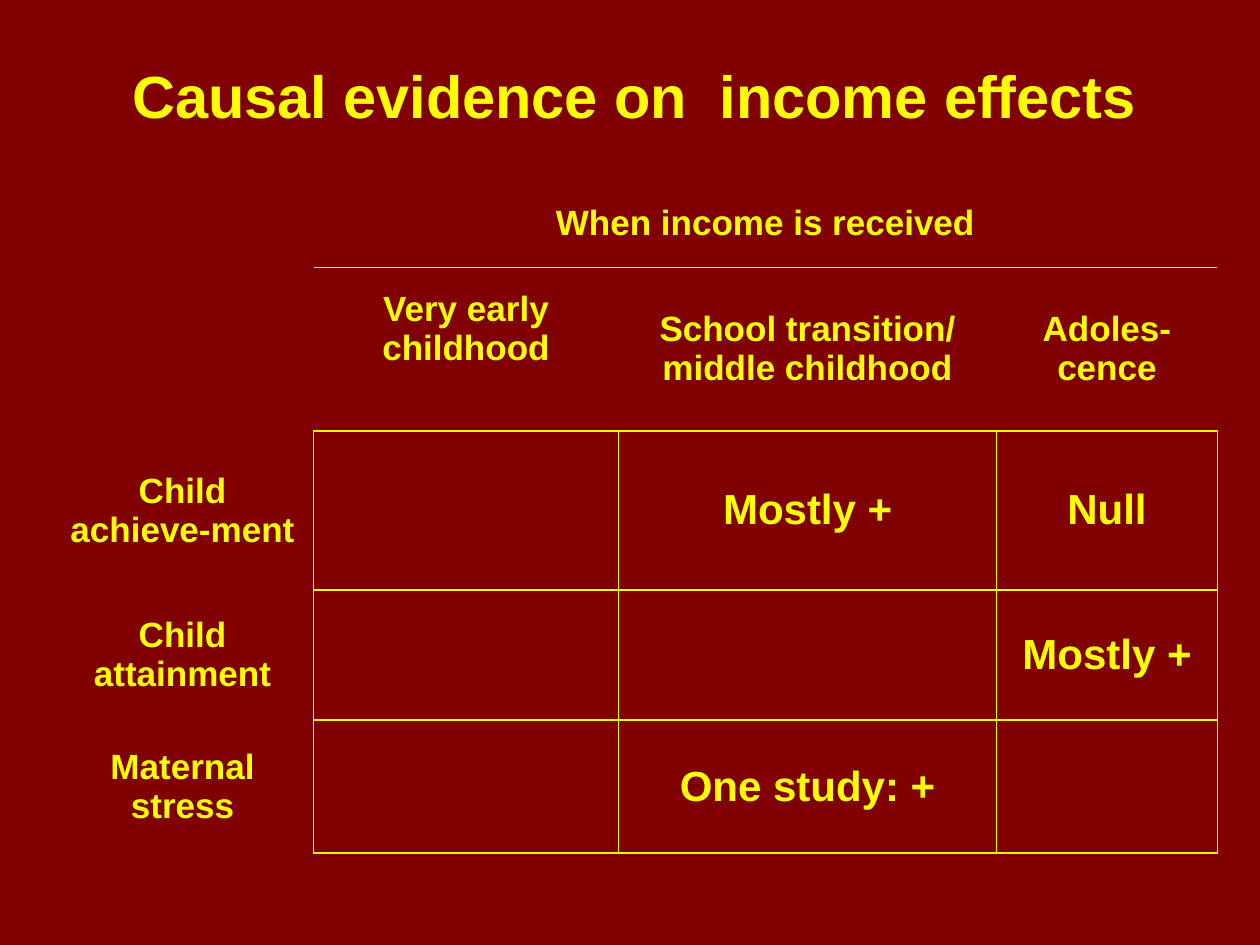
from dataclasses import dataclass

from lxml import etree
from pptx import Presentation
from pptx.dml.color import RGBColor
from pptx.enum.text import MSO_ANCHOR, MSO_AUTO_SIZE, PP_ALIGN
from pptx.oxml.ns import qn
from pptx.util import Cm, Pt

CENTER = PP_ALIGN.CENTER
MIDDLE = MSO_ANCHOR.MIDDLE
GROW = MSO_AUTO_SIZE.SHAPE_TO_FIT_TEXT

COLORS = {"background": "800000", "text": "FFFF00", "line": "FFFF00"}
FONT = "Arial"
SIDES = "LRTB"
COL_WIDTHS = [5.28, 6.15, 7.62, 4.45]
ROW_HEIGHTS = [1.78, 3.3, 3.2, 2.62, 2.69]


@dataclass
class Entry:
    row: int
    col: int
    text: str
    size: int = 20
    bottom: float = 0.13


ENTRIES = [
    Entry(0, 1, "When income is received"),
    Entry(1, 1, "Very early childhood", bottom=0.94),
    Entry(1, 2, "School transition/ middle childhood"),
    Entry(1, 3, "Adoles-cence"),
    Entry(2, 0, "Child achieve-ment"),
    Entry(2, 2, "Mostly +", 24),
    Entry(2, 3, "Null", 24),
    Entry(3, 0, "Child attainment"),
    Entry(3, 3, "Mostly +", 24),
    Entry(4, 0, "Maternal stress"),
    Entry(4, 2, "One study: +", 24),
]


def write(tf, text: str, size: int) -> None:
    tf.text = text
    p = tf.paragraphs[0]
    p.alignment = CENTER
    font = p.runs[0].font
    font.name, font.size, font.bold = FONT, Pt(size), True
    font.color.rgb = RGBColor.from_string(COLORS["text"])


def cell_sides(row: int, col: int) -> str:
    if col == 0:
        return "R" if row >= 2 else ""
    return {0: "B", 1: "TB"}.get(row, SIDES)


def set_borders(cell, sides: str) -> None:
    tc_pr = cell._tc.get_or_add_tcPr()
    for i, side in enumerate(SIDES):
        ln = etree.Element(qn(f"a:ln{side}"), w=str(Pt(1)))
        if side in sides:
            fill = etree.SubElement(ln, qn("a:solidFill"))
            etree.SubElement(fill, qn("a:srgbClr"), val=COLORS["line"])
        else:
            etree.SubElement(ln, qn("a:noFill"))
        tc_pr.insert(i, ln)


def add_evidence_table(s) -> None:
    table = s.shapes.add_table(
        len(ROW_HEIGHTS), len(COL_WIDTHS), Cm(1.04), Cm(3.61),
        Cm(sum(COL_WIDTHS)), Cm(sum(ROW_HEIGHTS)),
    ).table
    table.first_row = table.horz_banding = False
    for column, width in zip(table.columns, COL_WIDTHS):
        column.width = Cm(width)
    for row, height in zip(table.rows, ROW_HEIGHTS):
        row.height = Cm(height)
    for row in range(len(ROW_HEIGHTS)):
        for col in range(len(COL_WIDTHS)):
            cell = table.cell(row, col)
            cell.fill.background()
            set_borders(cell, cell_sides(row, col))
    table.cell(0, 1).merge(table.cell(0, 3))
    for entry in ENTRIES:
        cell = table.cell(entry.row, entry.col)
        cell.vertical_anchor = MIDDLE
        cell.margin_bottom = Cm(entry.bottom)
        write(cell.text_frame, entry.text, entry.size)


def add_title(s, text: str) -> None:
    sp = s.shapes.add_textbox(Cm(1.68), Cm(1.07), Cm(22.22), Cm(1.7))
    tf = sp.text_frame
    tf.word_wrap = True
    tf.auto_size = GROW
    write(tf, text, 34)


def main() -> None:
    prs = Presentation()
    prs.slide_width, prs.slide_height = Cm(25.4), Cm(19.05)
    s = prs.slides.add_slide(prs.slide_layouts[6])
    s.background.fill.solid()
    s.background.fill.fore_color.rgb = RGBColor.from_string(COLORS["background"])
    add_evidence_table(s)
    add_title(s, "Causal evidence on  income effects")
    prs.save("out.pptx")


if __name__ == "__main__":
    main()
